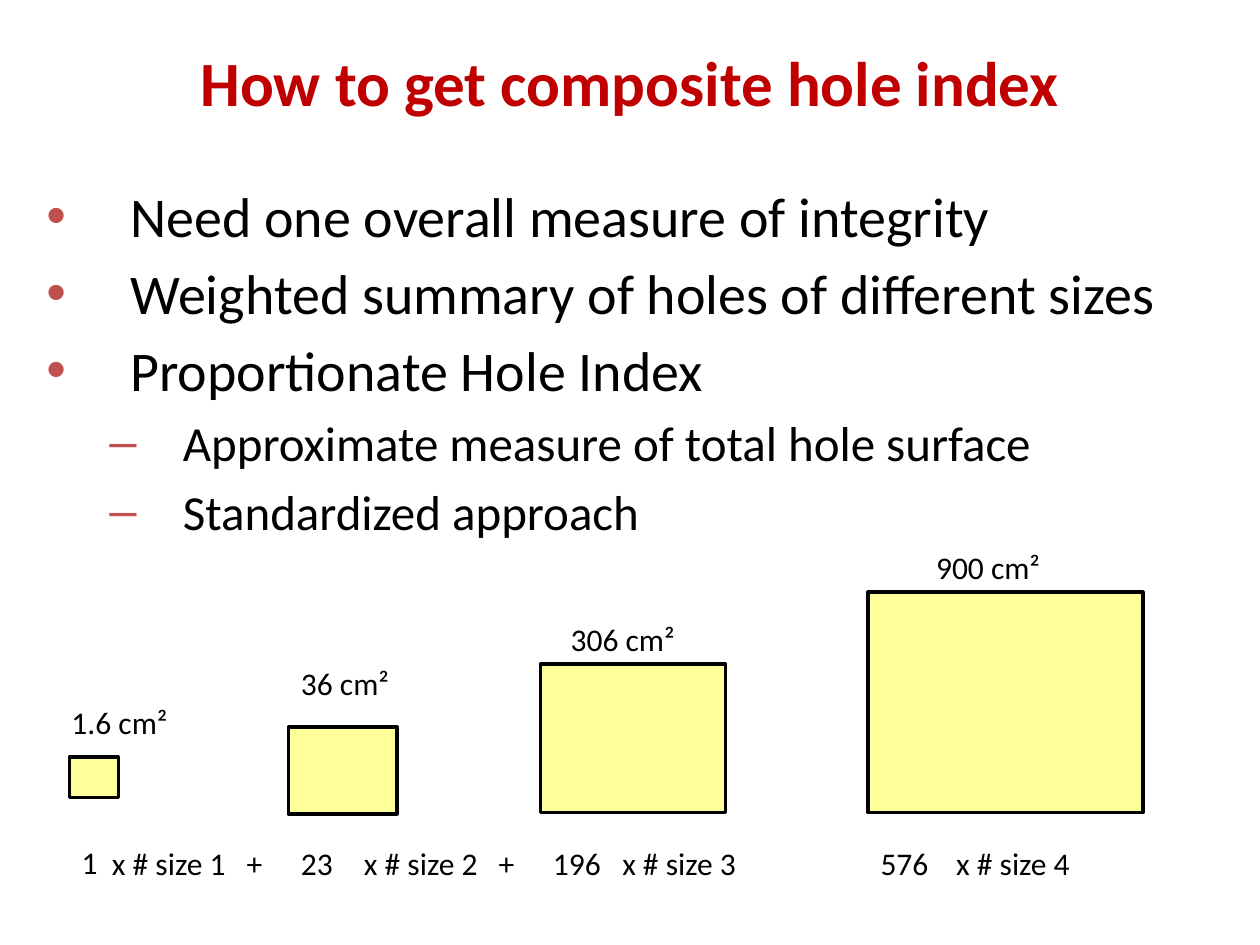
import pptx
import pptx.util
import pptx.dml.color
import pptx.enum.shapes
import pptx.enum.text
import lxml.etree

Pt = pptx.util.Pt
FONT = "Calibri"
BLACK, RED, BULLET, YELLOW = "000000", "C00000", "C0504D", "FFFF99"

TITLE = "How to get composite hole index"
POINTS = [
    (0, "Need one overall measure of integrity"),
    (0, "Weighted summary of holes of different sizes"),
    (0, "Proportionate Hole Index"),
    (1, "Approximate measure of total hole surface"),
    (1, "Standardized approach"),
]
LEVELS = [
    {"size": 32, "margin": 48, "indent": -48, "bullet": "•"},
    {"size": 28, "margin": 78, "indent": -42, "bullet": "–"},
]
HOLES = [
    {"box": (39.6, 432.7, 28.1, 23), "area": ("1.6 cm²", 33.8, 398.2, 76.3),
     "weight": ("1", 39.6, 478.1, 33.8), "count": ("x # size 1\t+", 56.9)},
    {"box": (164.9, 415.4, 61.9, 49.7), "area": ("36 cm²", 164.9, 375.8, 73.4),
     "weight": ("23", 164.9, 478.8, 33.8), "count": ("x # size 2\t+", 200.9)},
    {"box": (308.9, 379.4, 105.8, 85), "area": ("306 cm²", 319, 350.6, 85),
     "weight": ("196", 308.9, 478.8, 45.4), "count": ("x # size 3", 348.5)},
    {"box": (496.1, 338.4, 157, 126), "area": ("900 cm²", 527.8, 309.6, 85),
     "weight": ("576", 496.1, 478.8, 45.4), "count": ("x # size 4", 539.3)},
]
COUNT_TOP, COUNT_WIDTH, LABEL_HEIGHT, PLUS_STOP = 478.8, 147.6, 28.8, 77


def color(value):
    return pptx.dml.color.RGBColor.from_string(value)


def add_child(parent, tag, **attributes):
    child = lxml.etree.SubElement(parent, pptx.oxml.ns.qn(tag))
    for name, value in attributes.items():
        child.set(name, str(value))
    return child


def style(paragraph, size, font_color=BLACK, bold=False):
    font = paragraph.font
    font.name, font.size, font.bold = FONT, Pt(size), bold
    font.color.rgb = color(font_color)


def add_text_box(slide, left, top, width, height):
    box = slide.shapes.add_textbox(Pt(left), Pt(top), Pt(width), Pt(height))
    box.text_frame.word_wrap = True
    return box.text_frame


def add_label(slide, text, left, top, width):
    paragraph = add_text_box(slide, left, top, width, LABEL_HEIGHT).paragraphs[0]
    if "\t" in text:
        stops = add_child(paragraph._p.get_or_add_pPr(), "a:tabLst")
        add_child(stops, "a:tab", pos=Pt(PLUS_STOP), algn="l")
    paragraph.add_run().text = text
    style(paragraph, 18)


def add_title(slide):
    title = slide.shapes.title
    title.left, title.top, title.width, title.height = Pt(0), Pt(20.9), Pt(720), Pt(51.1)
    title.text_frame.text = TITLE
    title.text_frame.vertical_anchor = pptx.enum.text.MSO_ANCHOR.MIDDLE
    paragraph = title.text_frame.paragraphs[0]
    paragraph.alignment = pptx.enum.text.PP_ALIGN.CENTER
    style(paragraph, 36, RED, True)


def add_points(slide):
    frame = add_text_box(slide, 19.4, 100.1, 663.1, 266.4)
    for index, (level, text) in enumerate(POINTS):
        paragraph = frame.add_paragraph() if index else frame.paragraphs[0]
        look = LEVELS[level]
        paragraph.text, paragraph.level = text, level
        paragraph.space_before = Pt(5.6)
        properties = paragraph._p.get_or_add_pPr()
        properties.set("marL", str(Pt(look["margin"])))
        properties.set("indent", str(Pt(look["indent"])))
        add_child(add_child(properties, "a:buClr"), "a:srgbClr", val=BULLET)
        add_child(properties, "a:buFont", typeface="Arial")
        add_child(properties, "a:buChar", char=look["bullet"])
        style(paragraph, look["size"])


def add_hole(slide, hole):
    shape = slide.shapes.add_shape(
        pptx.enum.shapes.MSO_SHAPE.RECTANGLE, *map(Pt, hole["box"]))
    shape.shadow.inherit = False
    shape.fill.solid()
    shape.fill.fore_color.rgb = color(YELLOW)
    shape.line.color.rgb = color(BLACK)
    shape.line.width = Pt(2)
    add_label(slide, *hole["area"])
    add_label(slide, *hole["weight"])
    text, left = hole["count"]
    add_label(slide, text, left, COUNT_TOP, COUNT_WIDTH)


def main():
    presentation = pptx.Presentation()
    presentation.slide_width, presentation.slide_height = Pt(720), Pt(540)
    slide = presentation.slides.add_slide(presentation.slide_layouts[5])
    add_title(slide)
    add_points(slide)
    for hole in HOLES:
        add_hole(slide, hole)
    presentation.save("out.pptx")


if __name__ == "__main__":
    main()
